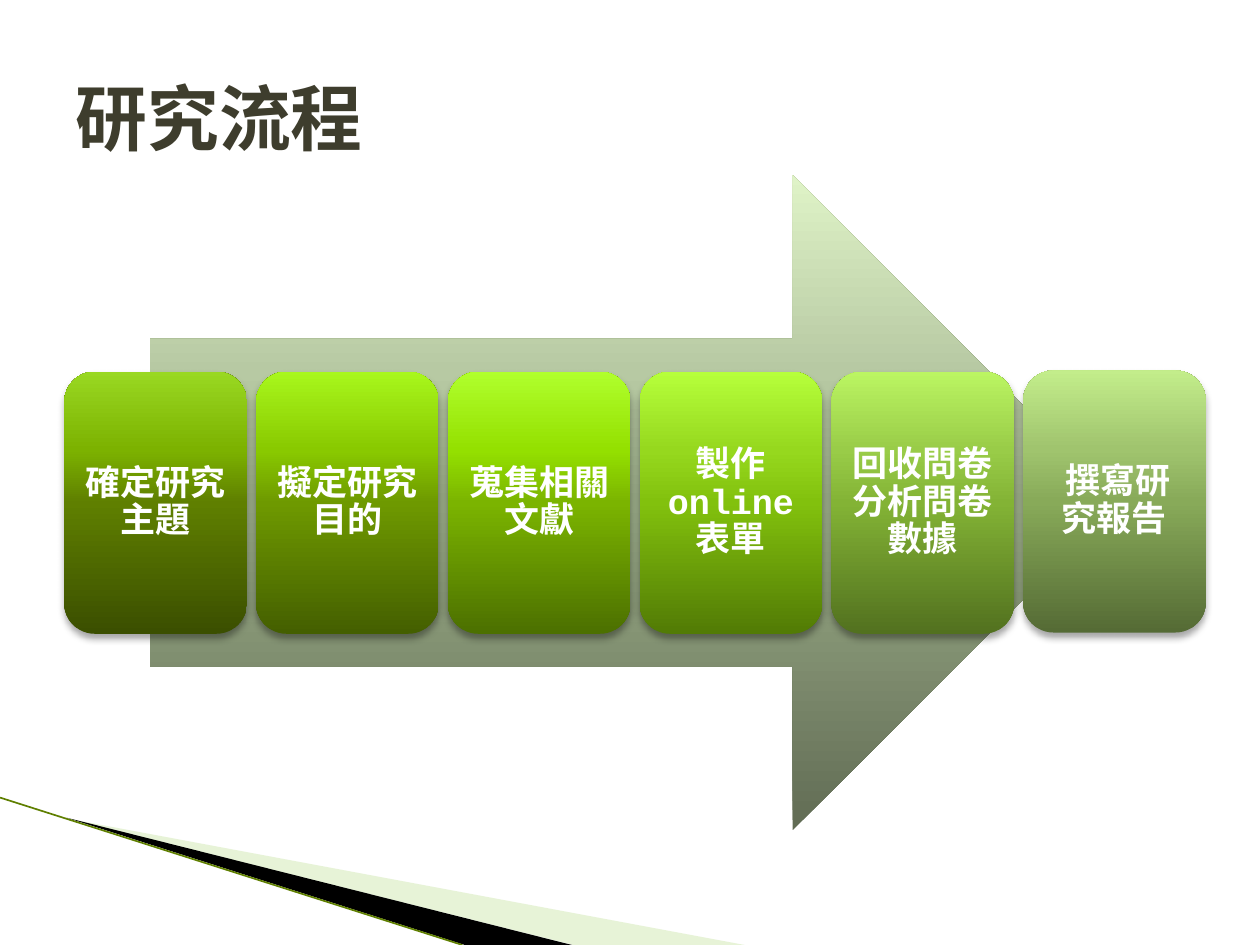
import pptx
import pptx.util
import lxml.etree
from pptx.dml.color import RGBColor
from pptx.enum.shapes import MSO_CONNECTOR, MSO_SHAPE
from pptx.enum.text import MSO_ANCHOR, MSO_AUTO_SIZE, PP_ALIGN
from pptx.oxml.ns import qn
from pptx.util import Inches

FONT = "Courier New"
TITLE_COLOR = RGBColor(0x3E, 0x3D, 0x2D)
WHITE = RGBColor(0xFF, 0xFF, 0xFF)
BLACK = RGBColor(0x00, 0x00, 0x00)
PALE_GREEN = RGBColor(0xC3, 0xE1, 0x9D)
EDGE_GREEN = RGBColor(0x5F, 0x7F, 0x00)

STOP_POSITIONS = (0, 50, 70, 100)


def gradient_colors(*codes):
    return [RGBColor.from_string(code) for code in codes]


ARROW_COLORS = gradient_colors("616C54", "9CAD89", "B7C9A3", "DFF3C7")

# Each step: text, top, gradient colours from bottom to top
STEPS = [
    ("確定研究主題", 2.95, gradient_colors("3B4F00", "5F7F00", "7CB200", "99D822")),
    ("擬定研究目的", 2.95, gradient_colors("445F00", "6E9900", "89C900", "A8F71C")),
    ("蒐集相關文獻", 2.95, gradient_colors("4C7000", "7BB400", "94E000", "B0FF2C")),
    ("製作online表單", 2.95, gradient_colors("527B05", "82C10D", "96D81E", "B6FF3B")),
    ("回收問卷分析問卷數據", 2.95, gradient_colors("52711F", "83B335", "99CC48", "BBF562")),
    (" 撰寫研究報告", 2.94, gradient_colors("556B35", "88AA59", "A0C46E", "C3ED8B")),
]
FIRST_LEFT, LAST_LEFT = 0.51, 8.12
STEP_PITCH = (LAST_LEFT - FIRST_LEFT) / (len(STEPS) - 1)


def add_span(para, text, size, color):
    span = para.add_run()
    span.text = text
    span.font.name = FONT
    span.font.size = pptx.util.Pt(size)
    span.font.bold = True
    span.font.color.rgb = color


def fill_gradient(shape, colors):
    """Fill with a four-stop gradient that runs upwards."""
    shape.fill.gradient()
    shape.fill.gradient_angle = 90
    stops = shape.fill._fill._gradFill.find(qn("a:gsLst"))
    for stop in list(stops):
        stops.remove(stop)
    for position, color in zip(STOP_POSITIONS, colors):
        stop = lxml.etree.SubElement(stops, qn("a:gs"), pos=str(position * 1000))
        lxml.etree.SubElement(stop, qn("a:srgbClr"), val=str(color))


def add_shadow(shape):
    effects = shape._element.spPr.find(qn("a:effectLst"))
    shadow = lxml.etree.SubElement(
        effects, qn("a:outerShdw"), blurRad=str(pptx.util.Pt(4)),
        dist=str(pptx.util.Pt(3)), dir=str(90 * 60000), rotWithShape="0")
    color = lxml.etree.SubElement(shadow, qn("a:srgbClr"), val=str(BLACK))
    lxml.etree.SubElement(color, qn("a:alpha"), val="35000")


def add_gradient_shape(slide, kind, left, top, width, height, colors):
    shape = slide.shapes.add_shape(
        kind, Inches(left), Inches(top), Inches(width), Inches(height))
    shape.shadow.inherit = False
    shape.line.fill.background()
    fill_gradient(shape, colors)
    return shape


def add_step(slide, left, top, text, colors):
    box = add_gradient_shape(
        slide, MSO_SHAPE.ROUNDED_RECTANGLE, left, top, 1.45, 2.08, colors)
    add_shadow(box)
    frame = box.text_frame
    frame.word_wrap = True
    frame.vertical_anchor = MSO_ANCHOR.MIDDLE
    frame.margin_left = frame.margin_right = Inches(0.08)
    frame.margin_top = frame.margin_bottom = Inches(0.08)
    para = frame.paragraphs[0]
    para.alignment = PP_ALIGN.CENTER
    para.line_spacing = 0.9
    para.space_after = pptx.util.Pt(7)
    add_span(para, text, 20, WHITE)


def add_wedge(slide, points, color, opacity=100):
    corners = [(Inches(x), Inches(y)) for x, y in points]
    builder = slide.shapes.build_freeform(*corners[0])
    builder.add_line_segments(corners[1:], close=True)
    wedge = builder.convert_to_shape()
    wedge.shadow.inherit = False
    wedge.line.fill.background()
    wedge.fill.solid()
    wedge.fill.fore_color.rgb = color
    if opacity < 100:
        fill_color = wedge._element.spPr.find(qn("a:solidFill"))[0]
        lxml.etree.SubElement(fill_color, qn("a:alpha"), val=str(opacity * 1000))


def add_edge_line(slide):
    edge = slide.shapes.add_connector(
        MSO_CONNECTOR.STRAIGHT, Inches(0), Inches(6.33), Inches(3.67), Inches(7.5))
    edge.line.color.rgb = EDGE_GREEN
    edge.line.width = pptx.util.Pt(0.95)
    lxml.etree.SubElement(edge._element.spPr, qn("a:effectLst"))


def set_title(slide, text):
    title = slide.shapes.title
    title.left, title.top = Inches(0.5), Inches(0.3)
    title.width, title.height = Inches(9), Inches(1.25)
    frame = title.text_frame
    frame.word_wrap = True
    frame.auto_size = MSO_AUTO_SIZE.NONE
    frame.vertical_anchor = MSO_ANCHOR.MIDDLE
    para = frame.paragraphs[0]
    para.alignment = PP_ALIGN.LEFT
    add_span(para, text, 41, TITLE_COLOR)


def main():
    deck = pptx.Presentation()
    deck.slide_width, deck.slide_height = Inches(10), Inches(7.5)
    slide = deck.slides.add_slide(deck.slide_layouts[5])

    add_wedge(slide, [(0.55, 6.5), (5.91, 7.5), (4.55, 7.5)], PALE_GREEN, 40)
    add_wedge(slide, [(0.53, 6.49), (4.54, 7.5), (3.69, 7.5)], BLACK)
    add_edge_line(slide)
    set_title(slide, "研究流程")

    add_gradient_shape(
        slide, MSO_SHAPE.RIGHT_ARROW, 1.19, 1.39, 7.7, 5.2, ARROW_COLORS)
    for index, (text, top, colors) in enumerate(STEPS):
        add_step(slide, FIRST_LEFT + index * STEP_PITCH, top, text, colors)

    deck.save("out.pptx")


if __name__ == "__main__":
    main()
